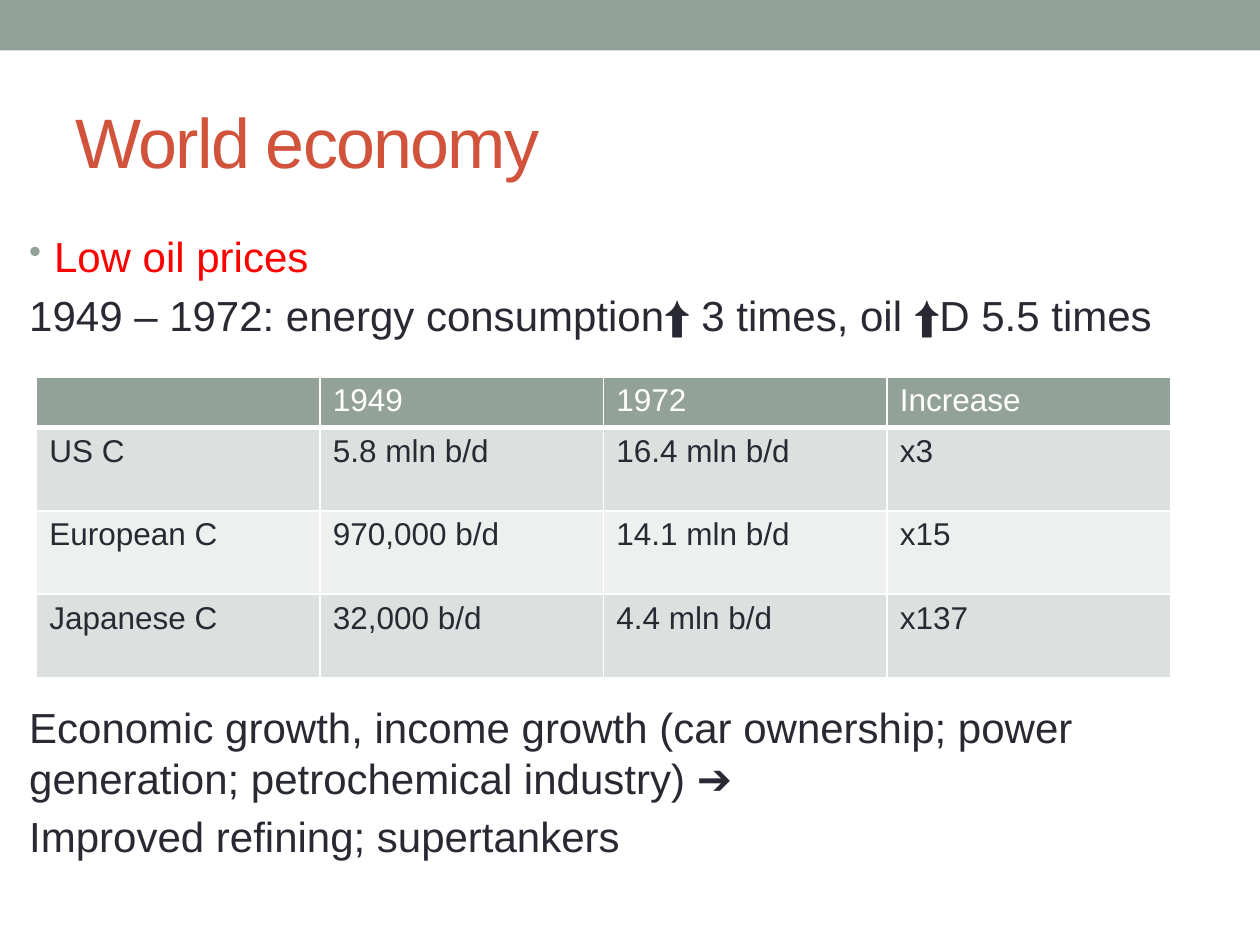
from dataclasses import dataclass

from lxml import etree
from pptx import Presentation
from pptx.dml.color import RGBColor
from pptx.enum.shapes import MSO_SHAPE
from pptx.enum.text import MSO_ANCHOR, PP_ALIGN
from pptx.oxml.ns import qn
from pptx.util import Cm, Pt

RECTANGLE = MSO_SHAPE.RECTANGLE
LEFT = PP_ALIGN.LEFT
MIDDLE = MSO_ANCHOR.MIDDLE
TOP = MSO_ANCHOR.TOP
TITLE_ONLY = 5


@dataclass(frozen=True)
class Theme:
    font: str = "Arial"
    accent: str = "93A299"
    title: str = "D2533C"
    text: str = "292934"
    highlight: str = "FF0000"
    white: str = "FFFFFF"
    bands: tuple = ("DCE0DE", "EEF0EF")
    title_size: int = 40
    body_size: int = 24
    table_size: int = 18


THEME = Theme()

OIL_ROWS = [
    ("", "1949", "1972", "Increase"),
    ("US C", "5.8 mln b/d", "16.4 mln b/d", "x3"),
    ("European C", "970,000 b/d", "14.1 mln b/d", "x15"),
    ("Japanese C", "32,000 b/d", "4.4 mln b/d", "x137"),
]


def add_run(paragraph, text, size, color):
    run = paragraph.add_run()
    run.text = text
    run.font.name = THEME.font
    run.font.size = Pt(size)
    run.font.color.rgb = RGBColor.from_string(color)
    return run


def add_bullet(paragraph):
    properties = paragraph._p.get_or_add_pPr()
    properties.set("marL", str(Cm(0.5)))
    properties.set("indent", str(-Cm(0.5)))
    color = etree.SubElement(properties, qn("a:buClr"))
    etree.SubElement(color, qn("a:srgbClr"), val=THEME.accent)
    etree.SubElement(properties, qn("a:buSzPct"), val="85000")
    etree.SubElement(properties, qn("a:buChar"), char="•")


def add_band(slide, width):
    band = slide.shapes.add_shape(RECTANGLE, 0, 0, width, Cm(1.02))
    band.shadow.inherit = False
    band.fill.solid()
    band.fill.fore_color.rgb = RGBColor.from_string(THEME.accent)
    band.line.fill.background()


def format_title(slide, text):
    title = slide.shapes.title
    title.left, title.top = Cm(1.27), Cm(1.47)
    title.width, title.height = Cm(22.86), Cm(2.74)
    title.text_frame.vertical_anchor = MIDDLE
    paragraph = title.text_frame.paragraphs[0]
    paragraph.alignment = LEFT
    run = add_run(paragraph, text, THEME.title_size, THEME.title)
    run.font._element.set("spc", "-100")


def add_body(slide, top, height, lines):
    """Each line is (text, color, bulleted)."""
    box = slide.shapes.add_textbox(Cm(0.34), top, Cm(23.8), height)
    frame = box.text_frame
    frame.word_wrap = True
    frame.vertical_anchor = TOP
    for index, (text, color, bulleted) in enumerate(lines):
        paragraph = frame.add_paragraph() if index else frame.paragraphs[0]
        if index:
            paragraph.space_before = Pt(0.2 * THEME.body_size)
        if bulleted:
            add_bullet(paragraph)
        add_run(paragraph, text, THEME.body_size, color)


def add_border(cell, side, points):
    line = etree.SubElement(cell._tc.get_or_add_tcPr(), qn(f"a:ln{side}"), w=str(Pt(points)))
    fill = etree.SubElement(line, qn("a:solidFill"))
    etree.SubElement(fill, qn("a:srgbClr"), val=THEME.white)


def format_cell(cell, text, row_index):
    header = row_index == 0
    for side in "LRTB":
        thick = (header and side == "B") or (row_index == 1 and side == "T")
        add_border(cell, side, 3 if thick else 1)
    fill = THEME.accent if header else THEME.bands[(row_index - 1) % 2]
    cell.fill.solid()
    cell.fill.fore_color.rgb = RGBColor.from_string(fill)
    paragraph = cell.text_frame.paragraphs[0]
    paragraph.font.size = Pt(THEME.table_size)
    if text:
        add_run(paragraph, text, THEME.table_size, THEME.white if header else THEME.text)


def add_oil_table(slide, rows):
    header_height, row_height = Cm(0.95), Cm(1.68)
    frame = slide.shapes.add_table(
        len(rows), len(rows[0]), Cm(0.74), Cm(7.6), Cm(22.86),
        header_height + row_height * (len(rows) - 1),
    )
    table = frame.table
    for row_index, values in enumerate(rows):
        table.rows[row_index].height = row_height if row_index else header_height
        for column_index, text in enumerate(values):
            format_cell(table.cell(row_index, column_index), text, row_index)


def main():
    presentation = Presentation()
    presentation.slide_width, presentation.slide_height = Cm(25.4), Cm(19.05)
    slide = presentation.slides.add_slide(presentation.slide_layouts[TITLE_ONLY])

    # Top band and title
    add_band(slide, presentation.slide_width)
    format_title(slide, "World economy")

    # Oil prices and consumption
    add_body(slide, Cm(4.52), Cm(2.8), [
        ("Low oil prices", THEME.highlight, True),
        ("1949 – 1972: energy consumption⬆ 3 times, oil ⬆D 5.5 times", THEME.text, False),
    ])
    add_oil_table(slide, OIL_ROWS)

    # Consequences
    add_body(slide, Cm(14.02), Cm(3.96), [
        ("Economic growth, income growth (car ownership; power generation; "
         "petrochemical industry) ➔", THEME.text, False),
        ("Improved refining; supertankers", THEME.text, False),
    ])

    presentation.save("out.pptx")


if __name__ == "__main__":
    main()
